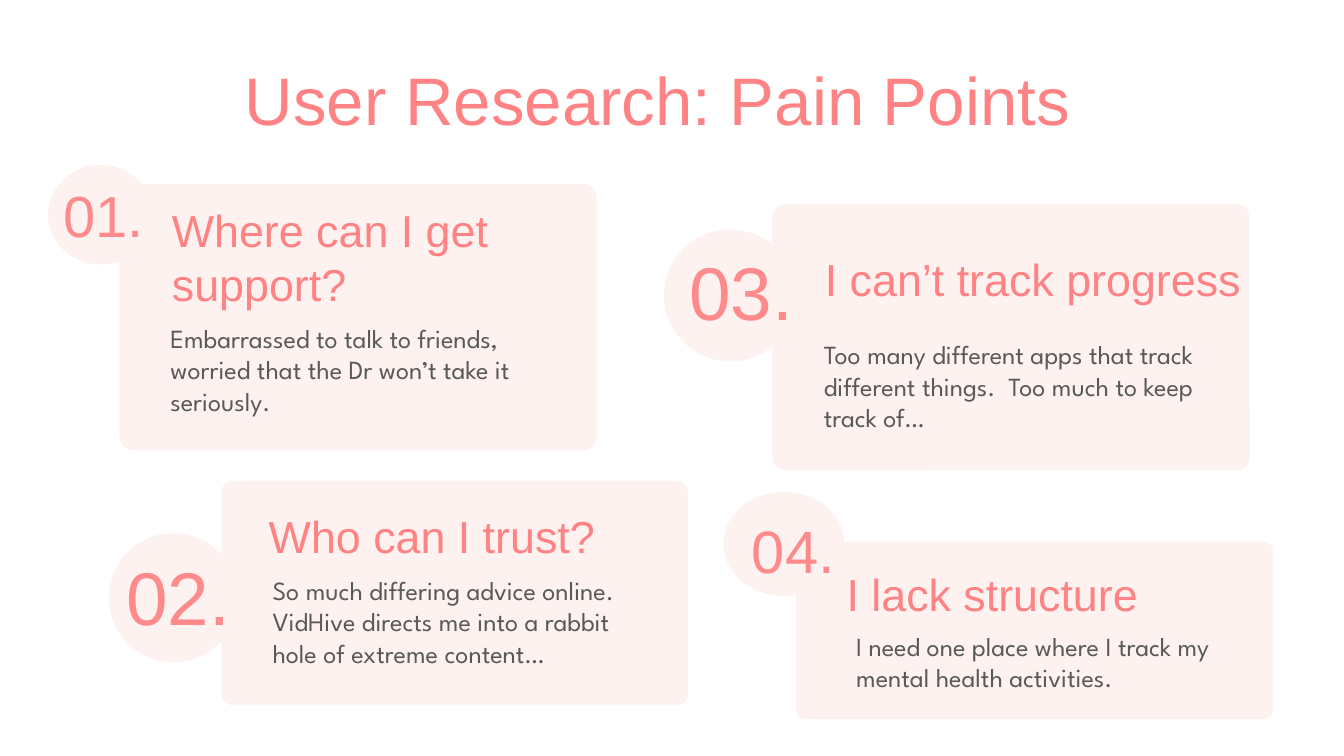
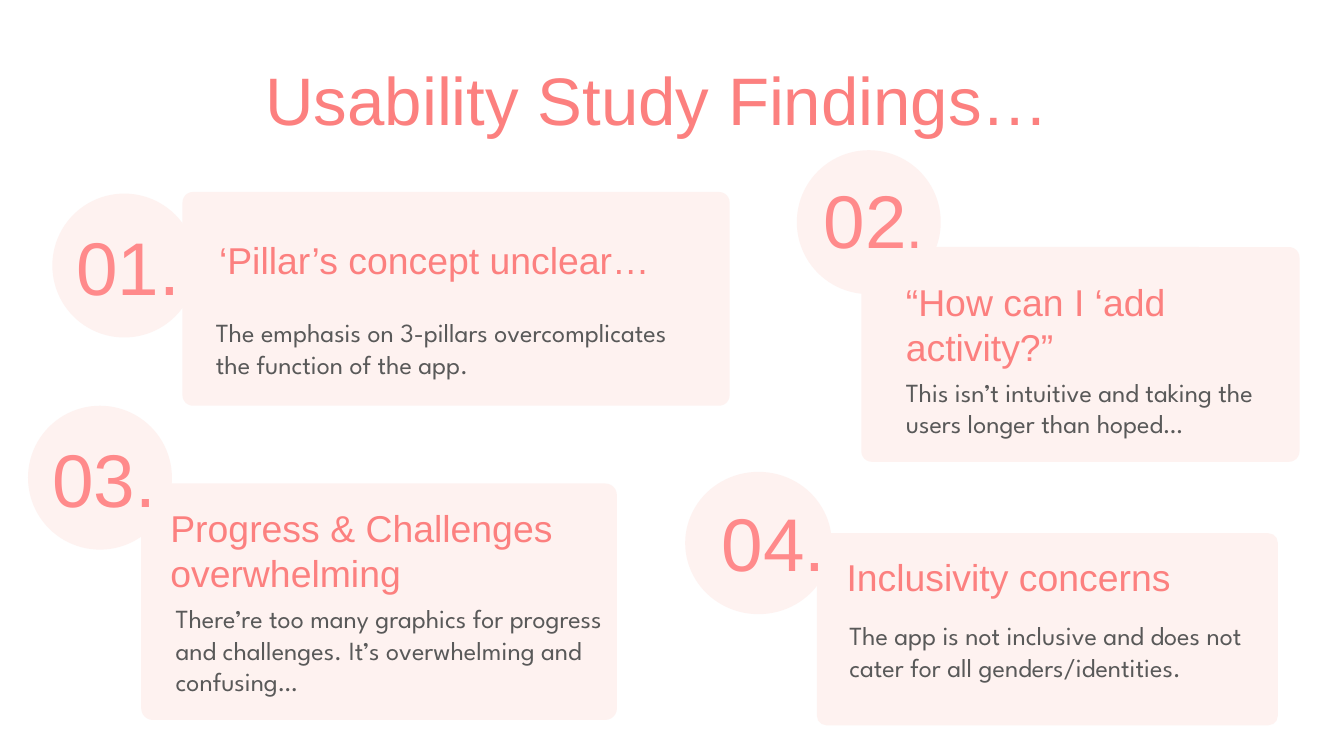
from dataclasses import dataclass
from typing import NamedTuple

from lxml.etree import SubElement
from pptx import Presentation
from pptx.dml.color import RGBColor
from pptx.enum.shapes import MSO_SHAPE
from pptx.enum.text import MSO_ANCHOR, MSO_AUTO_SIZE, PP_ALIGN
from pptx.oxml.ns import qn
from pptx.util import Cm, Pt

# Shared style
BLUSH = RGBColor(0xFE, 0xF2, 0xF0)
NUMBER_PINK = RGBColor(0xFF, 0x8A, 0x8B)
CORAL = RGBColor(0xFF, 0x83, 0x84)
SALMON = RGBColor(0xFC, 0x80, 0x7F)
GREY = RGBColor(0x59, 0x59, 0x59)
DISPLAY_FONT = "Arial"
BODY_FONT = "League Spartan"
INSET = Cm(0.25)
CORNER = 0.049
COMPARISON_LAYOUT = 4  # a title and four body placeholders


class Box(NamedTuple):
    """Left, top, width and height in centimetres."""
    left: float
    top: float
    width: float
    height: float


class TextStyle(NamedTuple):
    font: str
    size: float
    color: RGBColor
    align: PP_ALIGN = PP_ALIGN.LEFT
    anchor: MSO_ANCHOR = MSO_ANCHOR.MIDDLE


@dataclass
class Finding:
    heading: str
    detail: str
    panel: Box
    circle: Box
    heading_box: Box
    number_box: Box
    detail_box: Box
    number_size: float = 40
    dot_size: float = 40
    detail_indent: float = 0


@dataclass
class FindingsSlide:
    title: str
    accent: RGBColor
    heading_size: float
    findings: list[Finding]


TITLE_BOX = Box(2.72, 0.86, 19.41, 1.6)

PAIN_POINTS = FindingsSlide("User Research: Pain Points", CORAL, 24, [
    Finding("Where can I get support?",
            "Embarrassed to talk to friends, worried that the Dr won’t take it seriously.",
            panel=Box(2.26, 3.48, 9.02, 5.03), circle=Box(0.91, 3.12, 1.98, 1.88),
            heading_box=Box(3, 4.14, 7.57, 1.42), number_box=Box(0.33, 3.35, 2.64, 1.42),
            detail_box=Box(2.97, 5.46, 7.57, 3.05), number_size=31, dot_size=31),
    Finding("Who can I trust?",
            "So much differing advice online. VidHive directs me into a rabbit hole "
            "of extreme content…",
            panel=Box(4.19, 9.09, 8.81, 4.24), circle=Box(2.06, 10.08, 2.44, 2.44),
            heading_box=Box(4.83, 9.42, 7.57, 1.42), number_box=Box(1.96, 10.54, 2.64, 1.42),
            detail_box=Box(4.9, 10.36, 7.57, 2.77)),
    Finding("I can’t track progress",
            "Too many different apps that track different things.  Too much to keep track of…",
            panel=Box(14.6, 3.86, 9.02, 5.03), circle=Box(12.55, 4.34, 2.51, 2.49),
            heading_box=Box(15.34, 4.39, 9.02, 1.75), number_box=Box(12.6, 4.78, 2.64, 1.42),
            detail_box=Box(15.32, 6.05, 7.59, 2.49)),
    Finding("I lack structure",
            "I need one place where I track my mental health activities.",
            panel=Box(15.04, 10.24, 9.02, 3.35), circle=Box(13.67, 9.3, 2.29, 1.96),
            heading_box=Box(15.75, 10.52, 7.59, 1.42), number_box=Box(13.39, 9.68, 2.64, 1.42),
            detail_box=Box(15.93, 11.38, 7.59, 2.24), number_size=32, dot_size=32),
])

USABILITY = FindingsSlide("Usability Study Findings…", SALMON, 20, [
    Finding("‘Pillar’s concept unclear…",
            "The emphasis on 3-pillars overcomplicates the function of the app.",
            panel=Box(3.45, 3.63, 10.34, 4.04), circle=Box(0.99, 3.66, 2.72, 2.72),
            heading_box=Box(3.89, 4.19, 9.47, 1.42), number_box=Box(0.53, 4.06, 3.12, 1.91),
            detail_box=Box(3.45, 5.49, 9.91, 2.18), detail_indent=0.38),
    Finding("“How can I ‘add activity?”",
            "This isn’t intuitive and taking the users longer than hoped…",
            panel=Box(16.28, 4.67, 8.28, 4.06), circle=Box(15.06, 2.84, 2.72, 2.72),
            heading_box=Box(16.87, 5.41, 7.34, 1.42), number_box=Box(15.01, 3.43, 2.69, 1.42),
            detail_box=Box(16.87, 6.32, 7.57, 2.77), dot_size=32),
    Finding("Progress & Challenges overwhelming",
            "There’re too many graphics for progress and challenges. "
            "It’s overwhelming and confusing…",
            panel=Box(2.67, 9.14, 8.99, 4.47), circle=Box(0.53, 7.67, 2.72, 2.72),
            heading_box=Box(2.97, 9.53, 8.64, 1.75), number_box=Box(0.08, 8.31, 3.12, 1.42),
            detail_box=Box(3.07, 11.05, 8.99, 2.46)),
    Finding("Inclusivity concerns",
            "The app is not inclusive and does not cater for all genders/identities.",
            panel=Box(15.44, 10.08, 8.71, 3.63), circle=Box(12.95, 8.92, 2.77, 2.69),
            heading_box=Box(15.75, 10.19, 7.62, 1.42), number_box=Box(12.75, 9.53, 3.1, 1.42),
            detail_box=Box(15.8, 10.92, 8, 2.77)),
])


def lengths(box: Box) -> list[Cm]:
    return [Cm(value) for value in box]


def add_blush_shape(slide, kind: MSO_SHAPE, box: Box):
    shape = slide.shapes.add_shape(kind, *lengths(box))
    shape.shadow.inherit = False
    shape.fill.solid()
    shape.fill.fore_color.rgb = BLUSH
    shape.line.fill.background()
    return shape


def write(holder, text: str, box: Box, style: TextStyle, indent: float = 0):
    """Place a text holder, fill it and style its only paragraph."""
    holder.left, holder.top, holder.width, holder.height = lengths(box)
    frame = holder.text_frame
    frame.word_wrap = True
    frame.auto_size = MSO_AUTO_SIZE.NONE
    frame.vertical_anchor = style.anchor
    frame.margin_left = frame.margin_right = INSET
    frame.margin_top = frame.margin_bottom = INSET
    paragraph = frame.paragraphs[0]
    paragraph.text = text
    paragraph.alignment = style.align
    paragraph.space_before = Pt(0)
    # Clear inherited bullets and their hanging indent
    for properties in holder.element.iter(qn("a:pPr")):
        properties.set("marL", str(Cm(indent)))
        properties.set("indent", "0")
        SubElement(properties, qn("a:buNone"))
    paragraph.font.name = style.font
    paragraph.font.size = Pt(style.size)
    paragraph.font.bold = False
    paragraph.font.color.rgb = style.color
    return paragraph


def add_label(slide, text: str, box: Box, style: TextStyle):
    return write(slide.shapes.add_textbox(*lengths(box)), text, box, style)


def add_finding(slide, number: int, finding: Finding, heading_style: TextStyle) -> None:
    # Panel and number circle
    panel = add_blush_shape(slide, MSO_SHAPE.ROUNDED_RECTANGLE, finding.panel)
    panel.adjustments[0] = CORNER
    add_blush_shape(slide, MSO_SHAPE.OVAL, finding.circle)

    # Heading and number
    add_label(slide, finding.heading, finding.heading_box, heading_style)
    number_style = TextStyle(DISPLAY_FONT, finding.number_size, NUMBER_PINK, PP_ALIGN.RIGHT)
    same_size = finding.dot_size == finding.number_size
    digits = f"{number:02}"
    label = add_label(slide, f"{digits}." if same_size else digits,
                      finding.number_box, number_style)
    if not same_size:
        dot = label.add_run()
        dot.text = "."
        dot.font.size = Pt(finding.dot_size)

    # Detail, brought in front of its panel
    detail = slide.placeholders[number]
    write(detail, finding.detail, finding.detail_box,
          TextStyle(BODY_FONT, 14, GREY), finding.detail_indent)
    detail.element.getparent().append(detail.element)


def add_findings_slide(deck, content: FindingsSlide) -> None:
    slide = deck.slides.add_slide(deck.slide_layouts[COMPARISON_LAYOUT])
    title_style = TextStyle(DISPLAY_FONT, 36, content.accent, PP_ALIGN.CENTER, MSO_ANCHOR.TOP)
    write(slide.shapes.title, content.title, TITLE_BOX, title_style)
    heading_style = TextStyle(DISPLAY_FONT, content.heading_size, content.accent)
    for number, finding in enumerate(content.findings, start=1):
        add_finding(slide, number, finding, heading_style)


def main() -> None:
    deck = Presentation()
    deck.slide_width, deck.slide_height = Cm(25.4), Cm(14.29)
    for content in (PAIN_POINTS, USABILITY):
        add_findings_slide(deck, content)
    deck.save("out.pptx")


if __name__ == "__main__":
    main()
